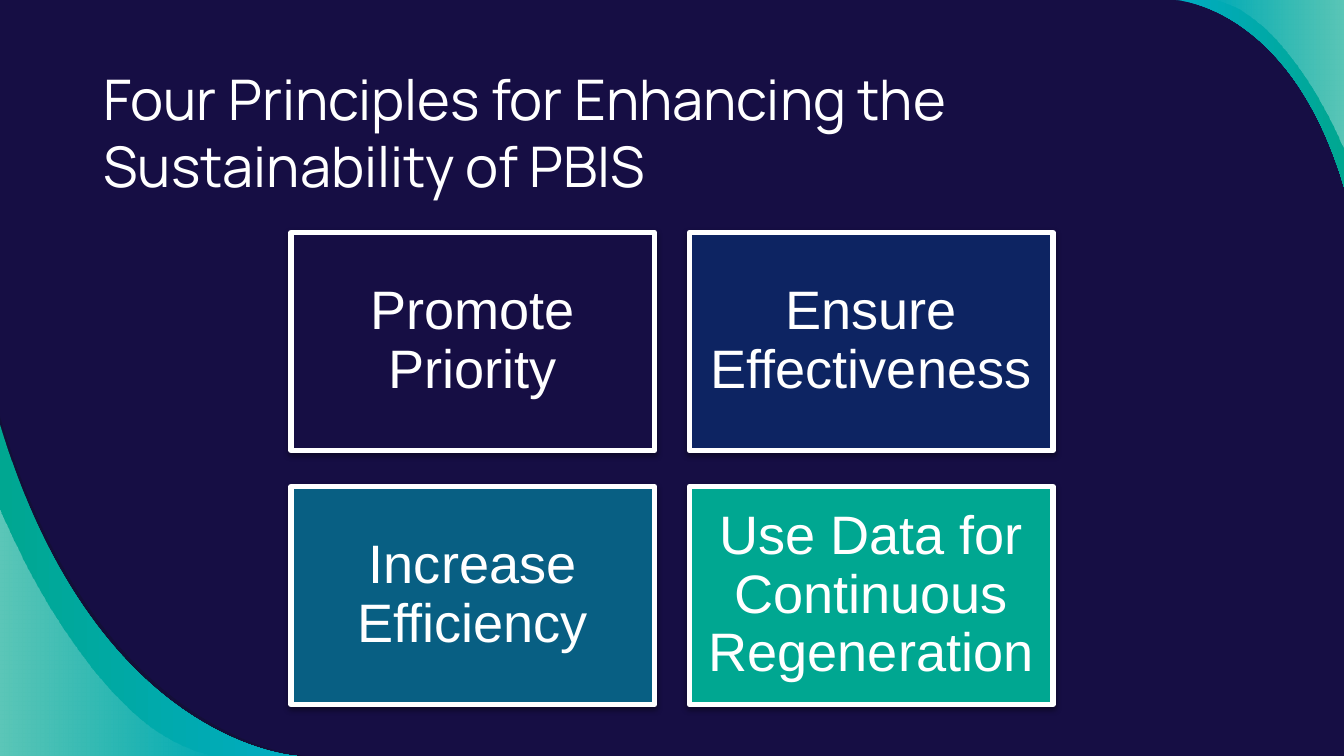
from lxml import etree
from pptx import Presentation
from pptx.dml.color import RGBColor
from pptx.enum.shapes import MSO_SHAPE as Shape
from pptx.enum.text import MSO_ANCHOR as Anchor, MSO_AUTO_SIZE as AutoSize, PP_ALIGN as Align
from pptx.oxml import parse_xml
from pptx.oxml.ns import nsdecls, qn
from pptx.util import Pt

COLORS = {
    "night": "160E44", "shade": "12102F", "navy": "0D2462", "blue": "085F83",
    "green": "00A791", "cyan": "00ACC2", "white": "FFFFFF",
}


def rgb(name):
    return RGBColor.from_string(COLORS[name])


def add_curved_corner(start, *points):
    """Draw a slide corner: two control points, curve end and corner, in Pt."""
    builder = slide.shapes.build_freeform(Pt(start[0]), Pt(start[1]))
    builder.add_line_segments([(Pt(x), Pt(y)) for x, y in points], close=True)
    shape = builder.convert_to_shape()
    # Turn the first three line segments into one Bezier curve
    lines = list(shape._element.spPr.iter(qn("a:lnTo")))[:3]
    curve = etree.Element(qn("a:cubicBezTo"))
    lines[0].addprevious(curve)
    for line in lines:
        curve.append(line[0])
        line.getparent().remove(line)
    shape.shadow.inherit = False
    shape.line.fill.background()
    return shape


presentation = Presentation()
presentation.slide_width, presentation.slide_height = Pt(720), Pt(405)
slide = presentation.slides.add_slide(presentation.slide_layouts[5])
slide.background.fill.solid()
slide.background.fill.fore_color.rgb = rgb("night")

# Curved corners: curve points, corner, then (colour, opacity %) from left to right
bottom_left, top_right = (0, 405), (720, 0)
corners = [
    ((0, 223.2), (52.6, 398.9), (163.4, 405), (163.4, 405), bottom_left,
     [("shade", 54)]),
    ((159.1, 405), (159.1, 405), (51.8, 399.6), (0, 227.5), bottom_left,
     [("green", 100), ("cyan", 100)]),
    ((0, 273.6), (0, 273.6), (49.7, 396.7), (116.6, 405), bottom_left,
     [("white", 36), ("white", 0)]),
    ((630, 0), (630, 0), (691.2, 2.9), (720, 100.1), top_right,
     [("cyan", 100), ("green", 100)]),
    ((720, 80.6), (720, 80.6), (689.8, 5), (648.7, 0), top_right,
     [("white", 0), ("white", 36)]),
]
for *outline, stops in corners:
    shape = add_curved_corner(*outline)
    if len(stops) == 1:
        shape.fill.solid()
        shape.fill.fore_color.rgb = rgb(stops[0][0])
    else:
        shape.fill.gradient()
        shape.fill.gradient_angle = 0
        for stop, (color, opacity) in zip(shape.fill.gradient_stops, stops):
            stop.color.rgb = rgb(color)
    for element, (color, opacity) in zip(shape._element.spPr.iter(qn("a:srgbClr")), stops):
        if opacity < 100:
            etree.SubElement(element, qn("a:alpha")).set("val", str(opacity * 1000))

# Title
title = slide.shapes.title
title.left, title.top, title.width, title.height = Pt(48.2), Pt(27.4), Pt(553.7), Pt(49.7)
title_format = {
    "word_wrap": True, "auto_size": AutoSize.NONE, "vertical_anchor": Anchor.TOP,
    "margin_left": Pt(7.2), "margin_right": Pt(7.2),
    "margin_top": Pt(7.2), "margin_bottom": Pt(7.2),
}
for name, value in title_format.items():
    setattr(title.text_frame, name, value)
title.text_frame.text = "Four Principles for Enhancing the Sustainability of PBIS"
paragraph = title.text_frame.paragraphs[0]
paragraph.alignment, paragraph.line_spacing = Align.LEFT, Pt(36)
paragraph.font.name, paragraph.font.size = "Manrope", Pt(30)
paragraph.font.color.rgb = rgb("white")

# Four principles in a two by two grid
principles = [
    ("Promote Priority", "night"),
    ("Ensure Effectiveness", "navy"),
    ("Increase Efficiency", "blue"),
    ("Use Data for Continuous Regeneration", "green"),
]
box_format = {
    "word_wrap": True, "vertical_anchor": Anchor.MIDDLE,
    "margin_left": Pt(8.6), "margin_right": Pt(8.6),
    "margin_top": Pt(8.6), "margin_bottom": Pt(8.6),
}
for index, (text, color) in enumerate(principles):
    row, column = divmod(index, 2)
    box = slide.shapes.add_shape(
        Shape.RECTANGLE, Pt(156 + column * 213.4), Pt(124.6 + row * 136.1), Pt(194.6), Pt(116.7))
    box.fill.solid()
    box.fill.fore_color.rgb = rgb(color)
    box.line.color.rgb = rgb("white")
    box.line.width = Pt(3)
    box.shadow.inherit = False
    box._element.spPr.find(qn("a:effectLst")).append(parse_xml(
        f'<a:outerShdw {nsdecls("a")} blurRad="{Pt(3.1)}" dist="{Pt(1.6)}" dir="5400000" '
        'rotWithShape="0"><a:srgbClr val="000000"><a:alpha val="38000"/></a:srgbClr></a:outerShdw>'))
    for name, value in box_format.items():
        setattr(box.text_frame, name, value)
    box.text_frame.text = text
    paragraph = box.text_frame.paragraphs[0]
    paragraph.alignment, paragraph.line_spacing = Align.CENTER, 0.9
    paragraph.font.name, paragraph.font.size = "Arial", Pt(29)
    paragraph.font.color.rgb = rgb("white")

presentation.save("out.pptx")
